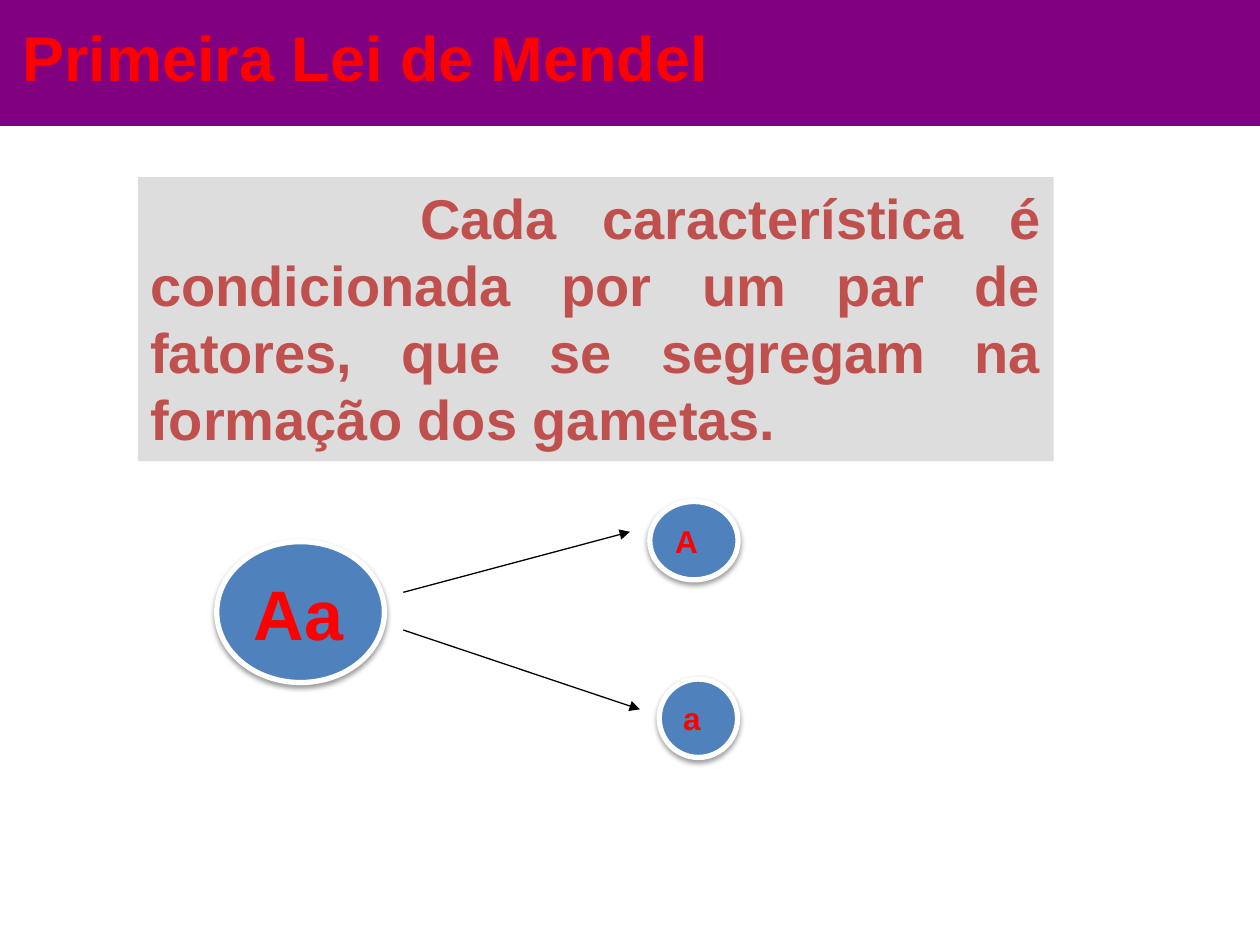
from dataclasses import dataclass

from lxml import etree
from pptx import Presentation
from pptx.dml.color import RGBColor
from pptx.enum.shapes import MSO_CONNECTOR, MSO_SHAPE
from pptx.enum.text import MSO_ANCHOR, PP_ALIGN
from pptx.oxml.ns import qn
from pptx.util import Cm, Pt

RECTANGLE, ELLIPSE = MSO_SHAPE.RECTANGLE, MSO_SHAPE.OVAL
STRAIGHT = MSO_CONNECTOR.STRAIGHT
TOP, MIDDLE = MSO_ANCHOR.TOP, MSO_ANCHOR.MIDDLE
LEFT, JUSTIFY = PP_ALIGN.LEFT, PP_ALIGN.JUSTIFY


@dataclass(frozen=True)
class Theme:
    font: str = "Arial"
    band: str = "800080"
    panel: str = "DDDDDD"
    cell: str = "4F81BD"
    rim: str = "FFFFFF"
    ink: str = "000000"
    accent: str = "FF0000"
    law: str = "C0504D"
    title_size: int = 36
    law_size: int = 32
    parent_size: int = 40
    gamete_size: int = 18


class MendelPage:
    def __init__(self, deck, theme):
        self.theme = theme
        self.page = deck.slides.add_slide(deck.slide_layouts[6])

    def add_text(self, box, text, size, color, align=LEFT, anchor=TOP):
        frame = box.text_frame
        frame.word_wrap = True
        frame.vertical_anchor = anchor
        para = frame.paragraphs[0]
        para.alignment = align
        span = para.add_run()
        span.text = text
        formats = {"name": self.theme.font, "size": Pt(size), "bold": True}
        for name, value in formats.items():
            setattr(span.font, name, value)
        span.font.color.rgb = RGBColor.from_string(color)
        return para

    def shape(self, kind, bounds, fill):
        box = self.page.shapes.add_shape(kind, *map(Cm, bounds))
        box.shadow.inherit = False
        box.fill.solid()
        box.fill.fore_color.rgb = RGBColor.from_string(fill)
        box.line.fill.background()
        return box

    def title(self, text, bounds):
        box = self.page.shapes.add_textbox(*map(Cm, bounds))
        self.add_text(box, text, self.theme.title_size, self.theme.accent)

    def law(self, text, bounds, indent):
        box = self.shape(RECTANGLE, bounds, self.theme.panel)
        para = self.add_text(box, text, self.theme.law_size, self.theme.law, JUSTIFY)
        para._p.get_or_add_pPr().set("indent", str(Cm(indent)))

    def cell(self, text, bounds, size):
        box = self.shape(ELLIPSE, bounds, self.theme.cell)
        box.line.color.rgb = RGBColor.from_string(self.theme.rim)
        box.line.width = Pt(3)
        effects = box._element.spPr.find(qn("a:effectLst"))
        shadow = etree.SubElement(
            effects, qn("a:outerShdw"), blurRad=str(Pt(3.1)), dist=str(Pt(1.6)),
            dir="5400000", rotWithShape="0")
        color = etree.SubElement(shadow, qn("a:srgbClr"), val=self.theme.ink)
        etree.SubElement(color, qn("a:alpha"), val="38000")
        self.add_text(box, text, size, self.theme.accent, anchor=MIDDLE)

    def arrow(self, start, end):
        line = self.page.shapes.add_connector(STRAIGHT, *map(Cm, start + end))
        line.line.color.rgb = RGBColor.from_string(self.theme.ink)
        line.line.width = Pt(0.75)
        etree.SubElement(line.line._get_or_add_ln(), qn("a:tailEnd"), type="triangle")
        etree.SubElement(line._element.spPr, qn("a:effectLst"))


def main():
    deck = Presentation()
    deck.slide_width, deck.slide_height = Cm(25.4), Cm(19.05)
    theme = Theme()
    page = MendelPage(deck, theme)

    page.shape(RECTANGLE, (0, 0, 25.4, 2.54), theme.band)
    page.title("Primeira Lei de Mendel", (0.2, 0.25, 17.45, 1.8))
    page.law(
        "Cada característica é condicionada por um par de fatores, "
        "que se segregam na formação dos gametas.",
        (2.78, 3.57, 18.46, 5.73), indent=5.44)

    page.cell("Aa", (4.37, 10.92, 3.38, 2.84), theme.parent_size)
    page.arrow((8.13, 11.94), (12.7, 10.72))
    page.arrow((8.13, 12.7), (12.9, 14.3))
    page.cell("a", (13.29, 13.69, 1.58, 1.58), theme.gamete_size)
    page.cell("A", (13.1, 10.11, 1.78, 1.58), theme.gamete_size)

    deck.save("out.pptx")


if __name__ == "__main__":
    main()
